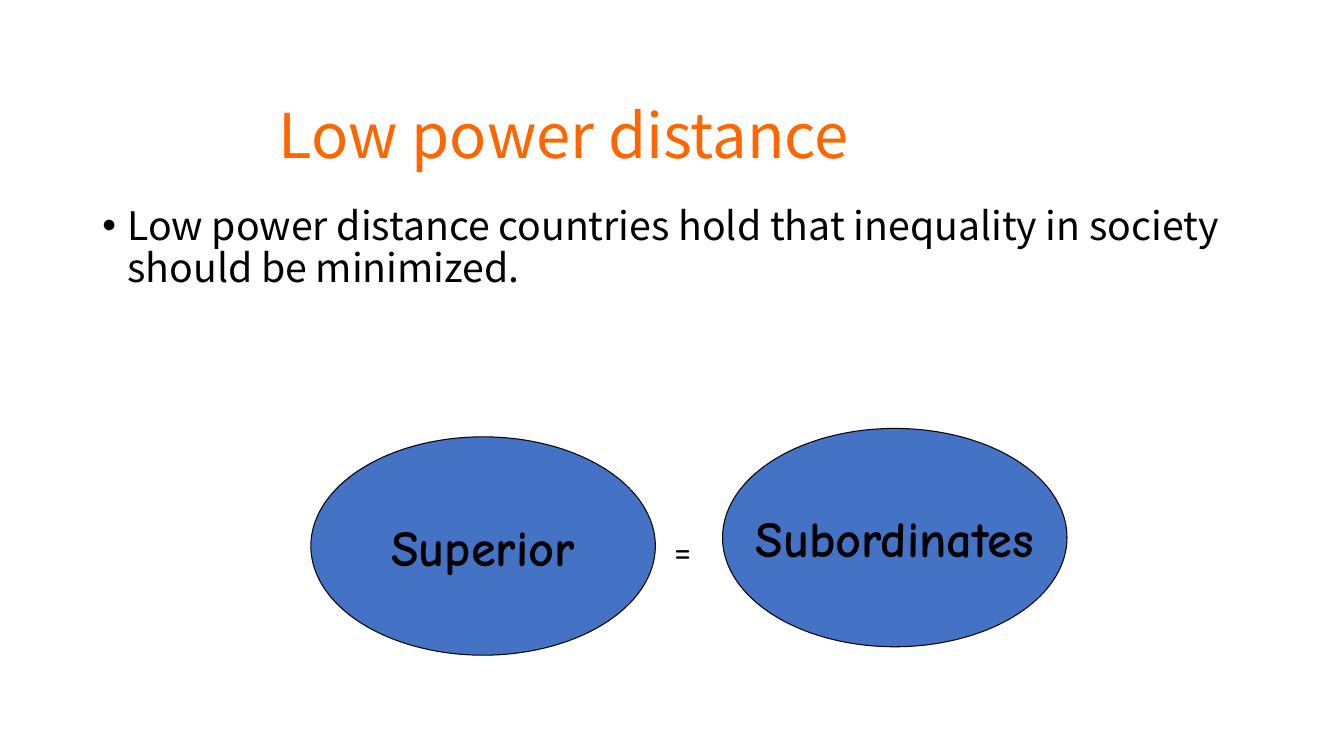
from dataclasses import dataclass, field
from lxml.etree import SubElement
from pptx import Presentation
from pptx.dml.color import RGBColor
from pptx.enum.shapes import MSO_SHAPE as Preset
from pptx.enum.text import MSO_ANCHOR as Anchor, MSO_AUTO_SIZE as Fit, PP_ALIGN as Align
from pptx.oxml.ns import qn
from pptx.shapes.autoshape import Shape
from pptx.slide import Slide
from pptx.util import Inches, Pt

ORANGE = RGBColor(0xFF, 0x66, 0x00)
BLUE = RGBColor(0x44, 0x72, 0xC4)
BLACK = RGBColor(0x00, 0x00, 0x00)
WHITE = RGBColor(0xFF, 0xFF, 0xFF)
SANS = "Noto Sans CJK SC"
COMIC = "Comic Neue"

# Grid of twelve cells to the inch
CELL = Inches(1) / 12


@dataclass
class Label:
    text: str
    col: float
    row: float
    cols: float
    rows: float
    font: dict
    color: RGBColor = BLACK
    frame: dict = field(default_factory=dict)
    para: dict = field(default_factory=dict)
    oval: bool = False
    bullet: bool = False


def apply(target: object, values: dict) -> None:
    for name, value in values.items():
        setattr(target, name, value)


def add_bullet(shape: Shape) -> None:
    props = shape.text_frame.paragraphs[0]._p.get_or_add_pPr()
    props.set("marL", str(Inches(0.25)))
    props.set("indent", str(Inches(-0.25)))
    SubElement(props, qn("a:buFont"), typeface="Arial")
    SubElement(props, qn("a:buChar"), char="•")


def draw(slide: Slide, label: Label) -> None:
    box = [round(n * CELL) for n in (label.col, label.row, label.cols, label.rows)]
    if label.oval:
        shape = slide.shapes.add_shape(Preset.OVAL, *box)
        shape.shadow.inherit = False
        shape.fill.solid()
        shape.fill.fore_color.rgb = BLUE
        shape.line.color.rgb = BLACK
        shape.line.width = Pt(0.75)
    else:
        shape = slide.shapes.add_textbox(*box)
    frame = shape.text_frame
    apply(frame, {"word_wrap": True, **label.frame})
    para = frame.paragraphs[0]
    apply(para, label.para)
    if label.bullet:
        add_bullet(shape)
    run = para.add_run()
    run.text = label.text
    apply(run.font, label.font)
    run.font.color.rgb = label.color


# Shared formats
ROLE = {
    "cols": 41, "rows": 26, "oval": True,
    "font": {"name": COMIC, "size": Pt(36), "bold": True},
    "frame": {"word_wrap": False, "vertical_anchor": Anchor.MIDDLE},
    "para": {"alignment": Align.CENTER},
}

LABELS = [
    # Heading and statement
    Label("Low power distance", 32, 0, 90, 21, {"name": SANS, "size": Pt(44)}, ORANGE,
          {"vertical_anchor": Anchor.BOTTOM, "auto_size": Fit.TEXT_TO_FIT_SHAPE},
          {"line_spacing": 0.9}),
    Label("Low power distance countries hold that inequality in society should be minimized.",
          11, 24, 138, 57, {"name": SANS, "size": Pt(28)},
          frame={"auto_size": Fit.TEXT_TO_FIT_SHAPE},
          para={"line_spacing": 0.9, "space_before": Pt(10)}, bullet=True),
    # Equal roles
    Label("Superior", 37, 52, **ROLE),
    Label("Subordinates", 86, 51, **ROLE),
    Label("=", 79, 62, 6.25, 6.8, {"name": COMIC, "size": Pt(28)},
          frame={"auto_size": Fit.SHAPE_TO_FIT_TEXT}),
]


def main() -> None:
    deck = Presentation()
    apply(deck, {"slide_width": Inches(13.33), "slide_height": Inches(7.5)})
    slide = deck.slides.add_slide(deck.slide_layouts[6])
    slide.background.fill.solid()
    slide.background.fill.fore_color.rgb = WHITE
    for label in LABELS:
        draw(slide, label)
    deck.save("out.pptx")


if __name__ == "__main__":
    main()
